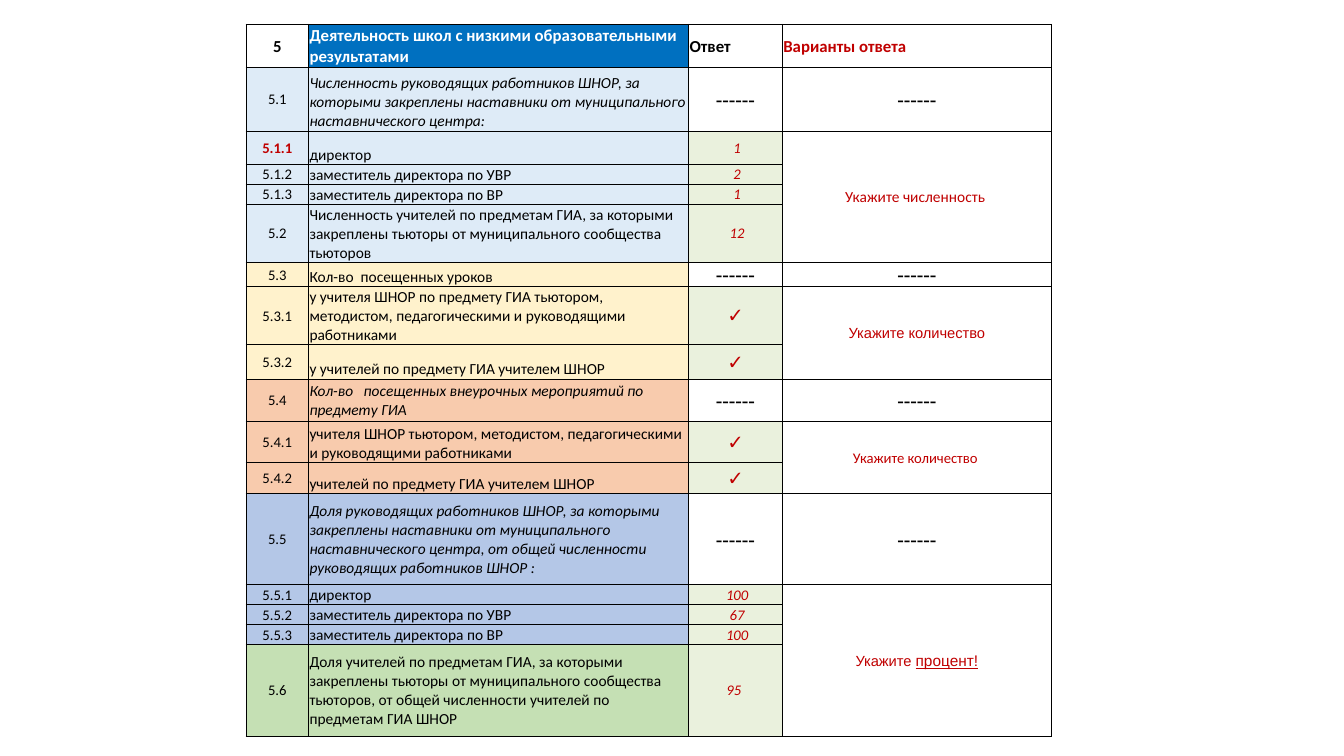
from dataclasses import dataclass

from lxml.etree import SubElement
from pptx import Presentation
from pptx.dml.color import RGBColor
from pptx.enum.text import MSO_ANCHOR as Anchor, PP_ALIGN as Align
from pptx.oxml.ns import qn
from pptx.table import _Cell as Cell
from pptx.util import Inches, Pt


@dataclass(frozen=True)
class Theme:
    black: str = "000000"
    white: str = "FFFFFF"
    red: str = "C00000"
    header: str = "0070C0"
    answer: str = "EAF1DD"
    sky: str = "DEEBF7"
    sand: str = "FFF2CC"
    peach: str = "F8CBAD"
    blue: str = "B4C7E7"
    green: str = "C5E0B4"
    header_size: float = 12
    body_size: float = 11
    small_size: float = 10.5
    dash_size: float = 14
    border: float = 0.5


THEME = Theme()
DASHES = "------"
CHECK = "✓"


@dataclass(frozen=True)
class Style:
    size: float = THEME.small_size
    color: str = THEME.black
    font: str = "Calibri"
    bold: bool = False
    italic: bool = False
    align: Align = Align.CENTER
    anchor: Anchor = Anchor.MIDDLE


@dataclass(frozen=True)
class Indicator:
    number: str
    text: str
    height: float
    tint: str
    answer: str = DASHES
    italic: bool = False
    anchor: Anchor = Anchor.BOTTOM


@dataclass(frozen=True)
class Hint:
    first: int
    last: int
    text: str
    style: Style
    underlined: str = ""


NUMBER = Style()
NUMBER_RED = Style(color=THEME.red, bold=True)
DASH = Style(THEME.dash_size, font="Times New Roman", bold=True)
VALUE = Style(color=THEME.red, italic=True)
TICK = Style(THEME.dash_size, THEME.red)

COLUMNS = (0.62, 3.77, 0.93, 2.67)
HEADER_HEIGHT = 0.43
HEADINGS = (
    ("5", THEME.black, None, Align.CENTER),
    ("Деятельность школ с низкими образовательными результатами",
     THEME.white, THEME.header, Align.LEFT),
    ("Ответ", THEME.black, None, Align.LEFT),
    ("Варианты ответа", THEME.red, None, Align.LEFT),
)
INDICATORS = (
    Indicator("5.1", "Численность руководящих работников ШНОР, за которыми закреплены "
              "наставники от муниципального наставнического центра:",
              0.63, THEME.sky, italic=True),
    Indicator("5.1.1", "директор", 0.33, THEME.sky, " 1"),
    Indicator("5.1.2", "заместитель директора по УВР", 0.18, THEME.sky, " 2"),
    Indicator("5.1.3", "заместитель директора по ВР", 0.18, THEME.sky, " 1"),
    Indicator("5.2", "Численность учителей по предметам ГИА, за которыми закреплены "
              "тьюторы от муниципального сообщества тьюторов", 0.55, THEME.sky, " 12"),
    Indicator("5.3", "Кол-во  посещенных уроков", 0.24, THEME.sand),
    Indicator("5.3.1", "у учителя ШНОР по предмету ГИА тьютором, методистом, "
              "педагогическими и руководящими работниками", 0.54, THEME.sand, CHECK),
    Indicator("5.3.2", "у учителей по предмету ГИА учителем ШНОР", 0.34, THEME.sand, CHECK),
    Indicator("5.4", "Кол-во   посещенных внеурочных мероприятий по предмету ГИА",
              0.42, THEME.peach, italic=True, anchor=Anchor.MIDDLE),
    Indicator("5.4.1", "учителя ШНОР тьютором, методистом, педагогическими "
              "и руководящими работниками", 0.41, THEME.peach, CHECK),
    Indicator("5.4.2", "учителей по предмету ГИА учителем ШНОР", 0.31, THEME.peach, CHECK),
    Indicator("5.5", "Доля руководящих работников ШНОР, за которыми закреплены наставники "
              "от муниципального наставнического центра, от общей численности "
              "руководящих работников ШНОР :",
              0.9, THEME.blue, italic=True, anchor=Anchor.MIDDLE),
    Indicator("5.5.1", "директор", 0.18, THEME.blue, " 100"),
    Indicator("5.5.2", "заместитель директора по УВР", 0.18, THEME.blue, " 67"),
    Indicator("5.5.3", "заместитель директора по ВР", 0.18, THEME.blue, " 100"),
    Indicator("5.6", "Доля учителей по предметам ГИА, за которыми закреплены тьюторы от "
              "муниципального сообщества тьюторов, от общей численности учителей "
              "по предметам ГИА ШНОР", 0.91, THEME.green, "95 ", anchor=Anchor.MIDDLE),
)
HINTS = (
    Hint(2, 5, "Укажите численность ", Style(THEME.body_size, THEME.red)),
    Hint(7, 8, "Укажите количество", Style(color=THEME.red, font="Arial")),
    Hint(10, 11, "Укажите количество ", Style(color=THEME.red)),
    Hint(13, 16, "Укажите ", Style(color=THEME.red, font="Arial"), "процент!"),
)


def format_span(span, style: Style) -> None:
    font = span.font
    font.size, font.name = Pt(style.size), style.font
    font.bold, font.italic = style.bold, style.italic
    font.color.rgb = RGBColor.from_string(style.color)


def write(cell: Cell, text: str, style: Style, fill: str | None = None) -> None:
    cell.text_frame.text = text
    cell.vertical_anchor = style.anchor
    para = cell.text_frame.paragraphs[0]
    para.alignment = style.align
    for span in para.runs:
        format_span(span, style)
    if fill:
        cell.fill.solid()
        cell.fill.fore_color.rgb = RGBColor.from_string(fill)


def prepare(cell: Cell) -> None:
    """Set the margins, a clear fill and thin borders on all sides."""
    cell.margin_left = cell.margin_top = cell.margin_right = Inches(0.01)
    cell.margin_bottom = 0
    cell.fill.background()
    properties = cell._tc.get_or_add_tcPr()
    for position, side in enumerate(("a:lnL", "a:lnR", "a:lnT", "a:lnB")):
        line = SubElement(properties, qn(side), w=str(Pt(THEME.border)))
        solid = SubElement(line, qn("a:solidFill"))
        SubElement(solid, qn("a:srgbClr"), val=THEME.black)
        properties.insert(position, line)


def write_indicator(cells: list[Cell], item: Indicator) -> None:
    number_style = NUMBER_RED if item.number == "5.1.1" else NUMBER
    write(cells[0], item.number, number_style, item.tint)
    text_style = Style(THEME.body_size, italic=item.italic, align=Align.LEFT,
                       anchor=item.anchor)
    write(cells[1], item.text, text_style, item.tint)
    if item.answer == DASHES:
        write(cells[2], DASHES, DASH)
        write(cells[3], DASHES, DASH)
    else:
        write(cells[2], item.answer, TICK if item.answer == CHECK else VALUE, THEME.answer)


def main() -> None:
    deck = Presentation()
    deck.slide_width, deck.slide_height = Inches(13.33), Inches(7.5)
    page = deck.slides.add_slide(deck.slide_layouts[6])

    # Table grid
    heights = [HEADER_HEIGHT] + [item.height for item in INDICATORS]
    table = page.shapes.add_table(
        len(heights), len(COLUMNS), Inches(2.44), Inches(0.24),
        Inches(sum(COLUMNS)), Inches(sum(heights))).table
    table.first_row = table.horz_banding = False
    for column, width in zip(table.columns, COLUMNS):
        column.width = Inches(width)
    for row, height in zip(table.rows, heights):
        row.height = Inches(height)
    for cell in table.iter_cells():
        prepare(cell)

    # Headings
    for index, (text, color, fill, align) in enumerate(HEADINGS):
        style = Style(THEME.header_size, color, bold=True, align=align)
        write(table.cell(0, index), text, style, fill)

    # Indicators and answers
    for index, item in enumerate(INDICATORS, start=1):
        write_indicator(list(table.rows[index].cells), item)

    # Merged hints in the last column
    for hint in HINTS:
        cell = table.cell(hint.first, 3)
        cell.merge(table.cell(hint.last, 3))
        write(cell, hint.text, hint.style)
        if hint.underlined:
            span = cell.text_frame.paragraphs[0].add_run()
            span.text = hint.underlined
            format_span(span, hint.style)
            span.font.size, span.font.underline = Pt(THEME.body_size), True

    deck.save("out.pptx")


if __name__ == "__main__":
    main()
